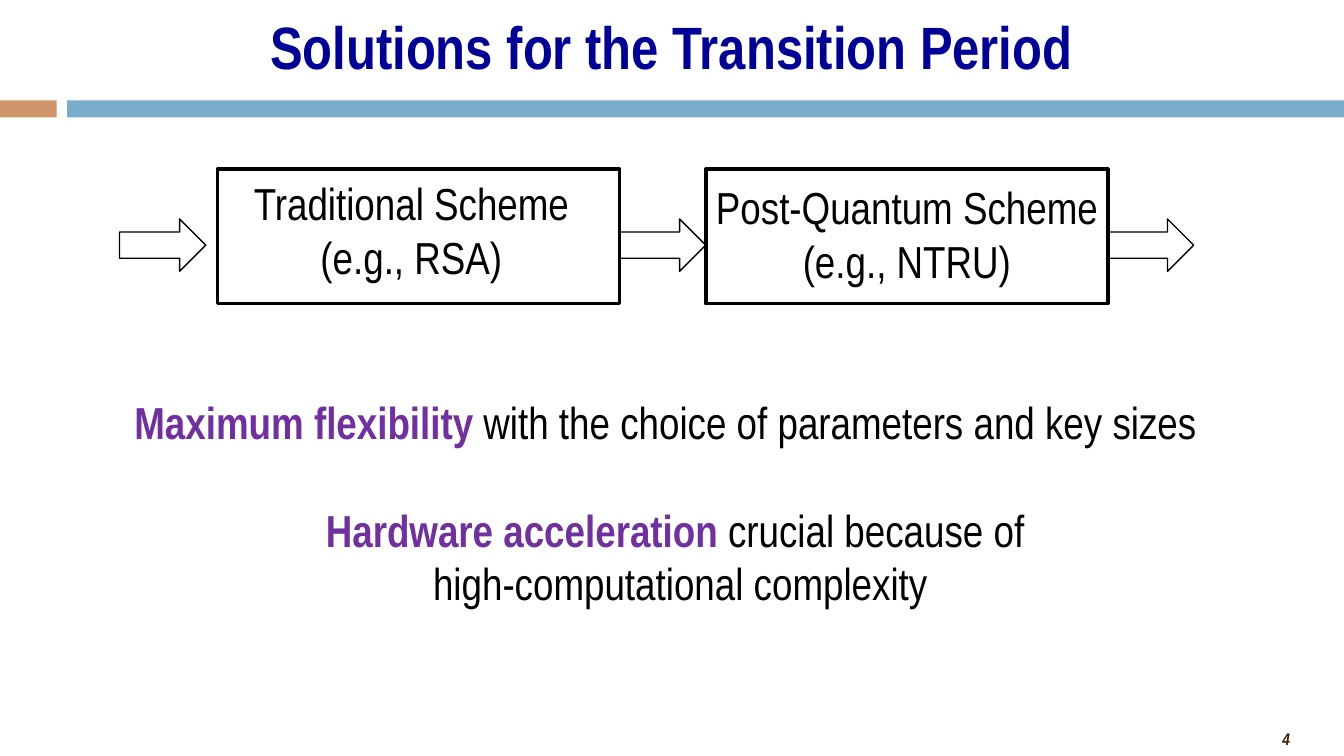
from pptx import Presentation
from pptx.dml.color import RGBColor
from pptx.enum.shapes import MSO_SHAPE
from pptx.enum.text import MSO_ANCHOR, PP_ALIGN
from pptx.util import Cm, Pt

COLORS = {
    "title": "000099",
    "text": "000000",
    "accent": "7030A0",
    "number": "402000",
    "orange": "CF9467",
    "blue": "7AADCC",
}


def add_box(kind, left, top, width, height, fill=None, line_width=None):
    shape = slide.shapes.add_shape(kind, Cm(left), Cm(top), Cm(width), Cm(height))
    shape.shadow.inherit = False
    if fill:
        shape.fill.solid()
        shape.fill.fore_color.rgb = RGBColor.from_string(COLORS[fill])
    else:
        shape.fill.background()
    if line_width:
        shape.line.color.rgb = RGBColor.from_string(COLORS["text"])
        shape.line.width = Pt(line_width)
    else:
        shape.line.fill.background()


def add_text(position, paragraphs, frame_format, paragraph_format, font_format):
    text_box = slide.shapes.add_textbox(*(Cm(value) for value in position))
    frame = text_box.text_frame
    for name, value in frame_format.items():
        setattr(frame, name, value)
    for index, lines in enumerate(paragraphs):
        paragraph = frame.add_paragraph() if index else frame.paragraphs[0]
        for name, value in paragraph_format.items():
            setattr(paragraph, name, value)
        for line_index, runs in enumerate(lines):
            if line_index:
                paragraph.add_line_break()
            for text, color, bold in runs:
                run = paragraph.add_run()
                run.text = text
                for name, value in {"name": "Arial Narrow", "bold": bold, **font_format}.items():
                    setattr(run.font, name, value)
                run.font.color.rgb = RGBColor.from_string(COLORS[color])


presentation = Presentation()
presentation.slide_width = Cm(25.4)
presentation.slide_height = Cm(14.29)
slide = presentation.slides.add_slide(presentation.slide_layouts[6])

CENTER = {"alignment": PP_ALIGN.CENTER}
BODY = {"size": Pt(24)}

add_text(
    (19.05, 13.67, 5.51, 0.58),
    [[[("4", "number", True)]]],
    {"word_wrap": True, "margin_left": Cm(0.18), "margin_right": Cm(0.18),
     "margin_top": Cm(0.1), "margin_bottom": Cm(0.1)},
    {"alignment": PP_ALIGN.RIGHT},
    {"size": Pt(9), "italic": True},
)

for left, width, color in [(0, 1.07, "orange"), (1.27, 24.13, "blue")]:
    add_box(MSO_SHAPE.RECTANGLE, left, 1.9, width, 0.32, fill=color)

add_text(
    (1.07, 0.15, 23.27, 1.57),
    [[[("Solutions for the Transition Period", "title", True)]]],
    {"word_wrap": True, "vertical_anchor": MSO_ANCHOR.MIDDLE},
    {**CENTER, "line_spacing": 0.94},
    {"size": Pt(32)},
)

for left in (4.11, 13.34):
    add_box(MSO_SHAPE.RECTANGLE, left, 3.2, 7.6, 2.54, line_width=2)
for left in (2.26, 11.71, 20.93):
    add_box(MSO_SHAPE.RIGHT_ARROW, left, 4.14, 1.63, 0.99, line_width=0.75)

schemes = [
    ((4.5, 3.2, 6.55, 2.31), "Traditional Scheme", "(e.g., RSA)"),
    ((13.23, 3.28, 7.82, 2.31), "Post-Quantum Scheme", "(e.g., NTRU)"),
]
for position, scheme, example in schemes:
    paragraphs = [[[(text, "text", False)]] for text in (scheme, example)]
    add_text(position, paragraphs, {"word_wrap": False}, CENTER, BODY)

add_text(
    (2.29, 7.34, 20.83, 1.27),
    [[[("Maximum flexibility ", "accent", True),
       ("with the choice of parameters and key sizes", "text", False)]]],
    {"word_wrap": False},
    {"alignment": PP_ALIGN.LEFT},
    BODY,
)
add_text(
    (1.07, 9.37, 23.57, 2.31),
    [[[("Hardware acceleration ", "accent", True), ("crucial because of ", "text", False)],
      [("high-computational complexity", "text", False)]]],
    {"word_wrap": True},
    CENTER,
    BODY,
)

presentation.save("out.pptx")
